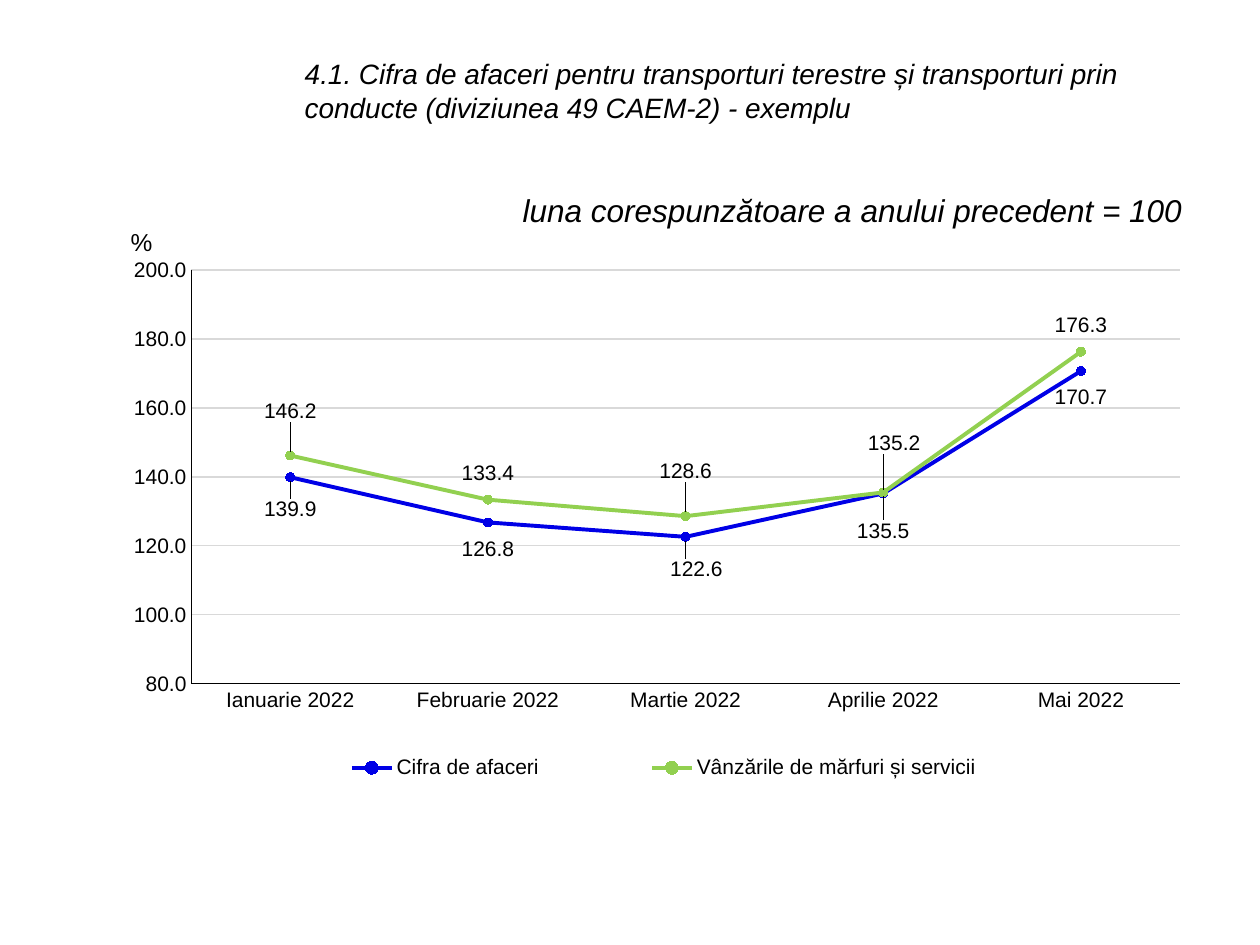
from lxml import etree
from pptx import Presentation
from pptx.chart.data import CategoryChartData as Data
from pptx.dml.color import RGBColor as RGB
from pptx.enum.chart import XL_CHART_TYPE as Kind, XL_LABEL_POSITION as Pos
from pptx.enum.chart import XL_LEGEND_POSITION as Side, XL_MARKER_STYLE as Mark
from pptx.enum.chart import XL_TICK_MARK as Tick
from pptx.oxml import parse_xml
from pptx.oxml.ns import qn
from pptx.util import Inches, Pt

HEX = {"ink": "000000", "grid": "D9D9D9", "blue": "0000E6", "green": "92D050"}
SPACE = 'xmlns:c="http://schemas.openxmlformats.org/drawingml/2006/chart"'
PLAIN = (
    f'<c:extLst {SPACE}><c:ext uri="{{CE6537A1-D6FC-4f65-9D91-7224C49458BB}}" '
    'xmlns:c15="http://schemas.microsoft.com/office/drawing/2012/chart">'
    '<c15:showLeaderLines val="0"/></c:ext></c:extLst>')


def style(font, size, slant=False):
    font.name = "Arial"
    font.size = Pt(size)
    font.bold = False
    font.italic = slant
    font.color.rgb = RGB.from_string(HEX["ink"])


def layout(box, spot, **vals):
    for old in box.findall(qn("c:layout")):
        box.remove(old)
    node = parse_xml(f"<c:layout {SPACE}><c:manualLayout/></c:layout>")
    for tag, val in vals.items():
        etree.SubElement(node[0], qn("c:" + tag)).set("val", str(val))
    box.insert(spot, node)


prs = Presentation()
prs.slide_width, prs.slide_height = Inches(10), Inches(7.5)
slide = prs.slides.add_slide(prs.slide_layouts[6])

data = Data(number_format="#,##0.0")
data.categories = [m + " 2022" for m in
                   ("Ianuarie", "Februarie", "Martie", "Aprilie", "Mai")]
data.add_series("Cifra de afaceri", (139.9, 126.8, 122.6, 135.2, 170.7))
data.add_series("Vânzările de mărfuri și servicii", (146.2, 133.4, 128.6, 135.5, 176.3))
chart = slide.shapes.add_chart(
    Kind.LINE_MARKERS, Inches(0.83), Inches(1.62), Inches(8.62), Inches(4.76), data).chart
style(chart.font, 10)

chart.has_title = True
head = chart.chart_title
head.text_frame.text = "%"
style(head.text_frame.paragraphs[0].runs[0].font, 14)
head.include_in_layout = False
layout(head._element, 1, xMode="edge", yMode="edge", x=0.02, y=0.03)

chart.has_legend = True
legend = chart.legend
legend.position = Side.BOTTOM
legend.include_in_layout = False
style(legend.font, 12)
layout(legend._element, 1, xMode="edge", yMode="edge", x=0.13, y=0.9, w=0.77, h=0.08)

for axis in (chart.category_axis, chart.value_axis):
    axis.major_tick_mark = axis.minor_tick_mark = Tick.NONE
    axis.format.line.color.rgb = RGB.from_string(HEX["ink"])
    axis.format.line.width = Pt(0.75)
    style(axis.tick_labels.font, 12)
scale = chart.value_axis
scale.minimum_scale, scale.maximum_scale, scale.major_unit = 80, 200, 20
scale.tick_labels.number_format = "#,##0.0"
scale.tick_labels.number_format_is_linked = False
scale.has_major_gridlines = True
grid = scale.major_gridlines.format.line
grid.color.rgb = RGB.from_string(HEX["grid"])
grid.width = Pt(0.75)

plot = chart.plots[0]
plot.vary_by_categories = False
layout(plot._element.getparent(), 0, layoutTarget="inner", xMode="edge", yMode="edge",
       x=0.08, y=0.11, w=0.91, h=0.69)

up, down = Pos.ABOVE, Pos.BELOW
shifts = (
    ((down, 0, 0.02), (down, 0, 0.01), (down, 0.01, 0.02), (up, 0.01, -0.05), (down, 0, 0.01)),
    ((up, 0, -0.04), (up, 0, -0.01), (up, 0, -0.04), (down, 0, 0.03), (up, 0, -0.01)),
)
for line, hue, moves in zip(plot.series, ("blue", "green"), shifts):
    tint = RGB.from_string(HEX[hue])
    line.smooth = False
    line.format.line.color.rgb = tint
    line.format.line.width = Pt(2.25)
    dot = line.marker
    dot.style, dot.size = Mark.CIRCLE, 5
    dot.format.fill.solid()
    dot.format.fill.fore_color.rgb = tint
    dot.format.line.color.rgb = tint
    tags = line.data_labels
    tags.show_value = True
    tags.position = up
    tags.number_format = "#,##0.0"
    tags.number_format_is_linked = False
    style(tags.font, 12)
    for i, (pos, x, y) in enumerate(moves):
        tag = line.points[i].data_label
        style(tag.font, 12)
        tag.position = pos
        layout(tags._element.findall(qn("c:dLbl"))[i], 1, x=x, y=y)
    for old in tags._element.findall(qn("c:showLeaderLines")):
        tags._element.remove(old)
    tags._element.append(parse_xml(PLAIN))

notes = (
    (2.32, 0.4, 6.99, 0.91, 16, "4.1. Cifra de afaceri pentru transporturi terestre și "
     "transporturi prin conducte (diviziunea 49 CAEM-2) - exemplu"),
    (4.05, 1.47, 5.52, 0.4, 18, "luna corespunzătoare a anului precedent = 100"),
)
for x, y, w, h, size, words in notes:
    frame = slide.shapes.add_textbox(Inches(x), Inches(y), Inches(w), Inches(h)).text_frame
    frame.word_wrap = True
    frame.text = words
    style(frame.paragraphs[0].runs[0].font, size, True)

prs.save("out.pptx")
